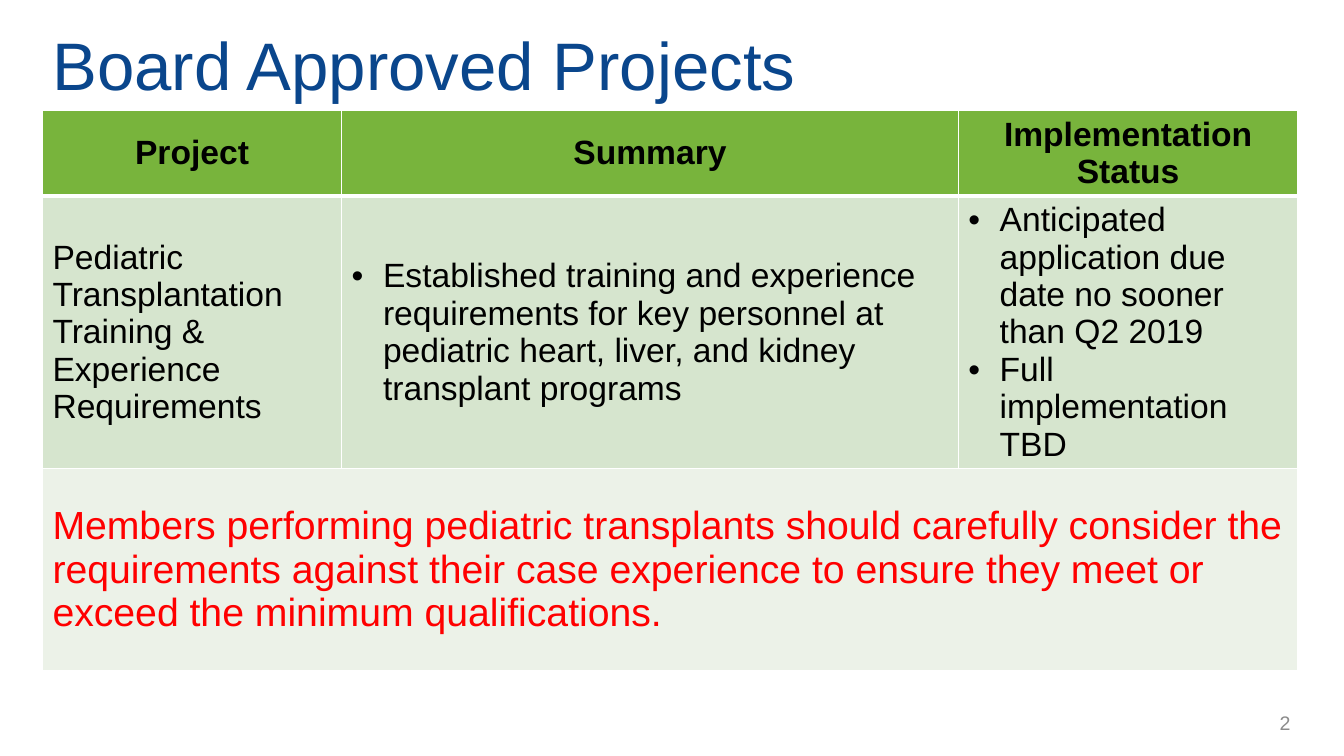
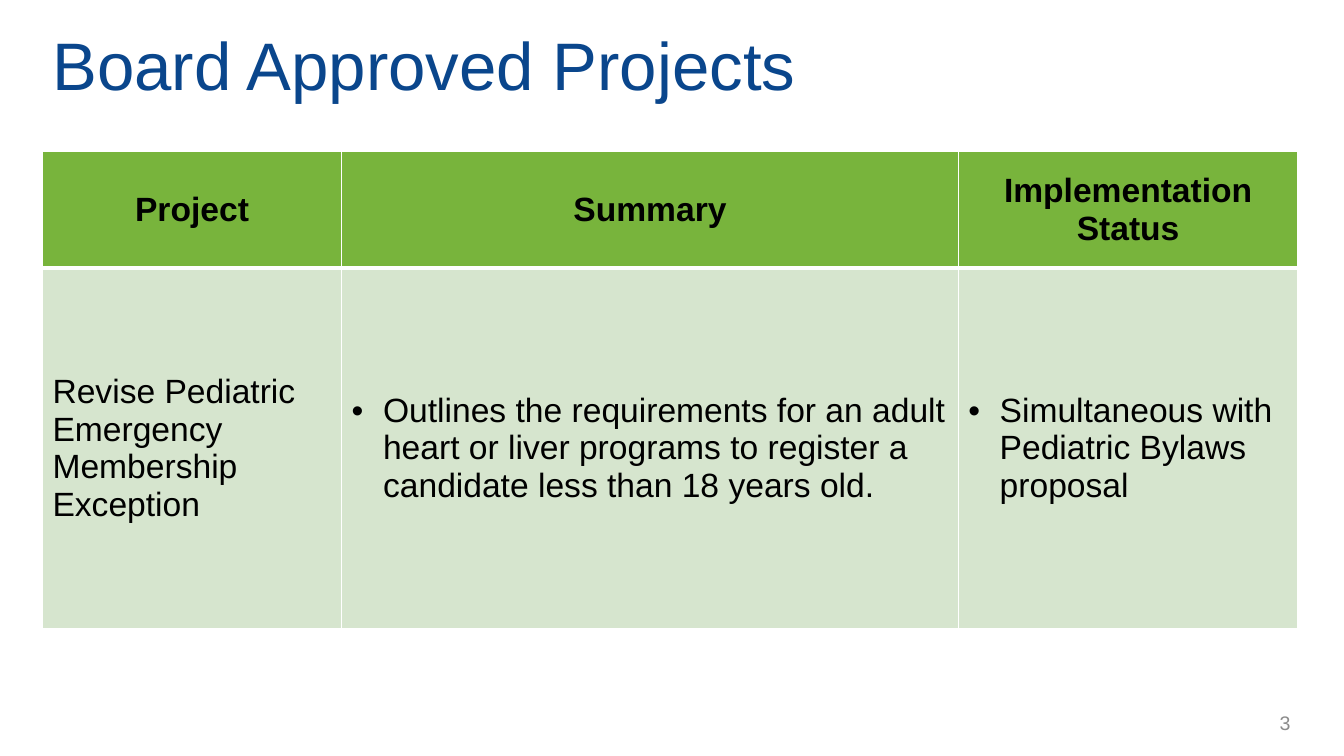
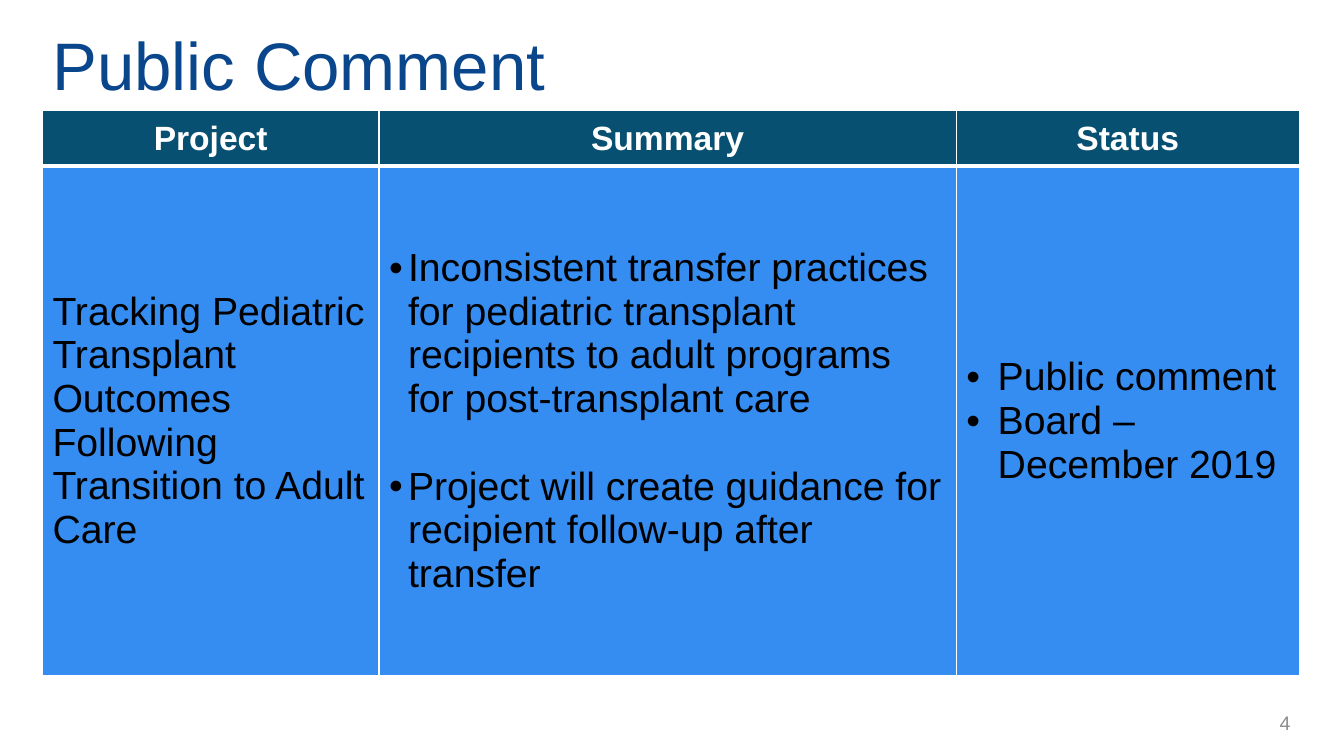
from dataclasses import dataclass

from lxml.etree import SubElement
from pptx import Presentation
from pptx.dml.color import RGBColor
from pptx.enum.text import MSO_ANCHOR, PP_ALIGN
from pptx.oxml.ns import qn
from pptx.presentation import Presentation as Deck
from pptx.slide import Slide
from pptx.table import _Cell
from pptx.text.text import TextFrame, _Paragraph
from pptx.util import Cm, Pt


@dataclass(frozen=True)
class Theme:
    font: str = "Arial"
    navy: str = "0A468C"
    green: str = "78B43C"
    sage: str = "D6E5CE"
    mist: str = "ECF2E8"
    teal: str = "085072"
    blue: str = "358CF1"
    red: str = "FF0000"
    gray: str = "8C8C8C"
    black: str = "000000"
    white: str = "FFFFFF"
    title_size: float = 48
    large_size: float = 28
    body_size: float = 24
    number_size: float = 14
    rule: float = 1
    header_rule: float = 3


THEME = Theme()


@dataclass(frozen=True)
class Entry:
    lines: tuple[str, ...]
    fill: str
    size: float = THEME.body_size
    color: str = THEME.black
    bold: bool = False
    align: PP_ALIGN = PP_ALIGN.LEFT
    indent: float = 0
    gap: float = 0


@dataclass(frozen=True)
class ProjectSlide:
    title: str
    number: int
    top: float
    columns: tuple[float, ...]
    heights: tuple[float, ...]
    rows: tuple[tuple[Entry, ...], ...]


LEFT = 1.07
BULLET_INDENT = 0.79
TIGHT_INDENT = 0.48
BOARD_COLUMNS = (7.54, 15.54, 8.56)
COMMENT_COLUMNS = (8.48, 14.55, 8.64)


def header(labels: tuple[str, ...], fill: str, color: str) -> tuple[Entry, ...]:
    return tuple(
        Entry((label,), fill, color=color, bold=True, align=PP_ALIGN.CENTER)
        for label in labels
    )


BOARD_HEADER = header(
    ("Project", "Summary", "Implementation Status"), THEME.green, THEME.black
)

PROJECT_SLIDES = (
    ProjectSlide(
        "Board Approved Projects", 2, 2.79, BOARD_COLUMNS, (2.13, 6.88, 5.08),
        (
            BOARD_HEADER,
            (
                Entry(("Pediatric Transplantation Training & Experience Requirements",),
                      THEME.sage),
                Entry(("Established training and experience requirements for key "
                       "personnel at pediatric heart, liver, and kidney transplant "
                       "programs",), THEME.sage, indent=BULLET_INDENT),
                Entry(("Anticipated application due date no sooner than Q2 2019",
                       "Full implementation TBD"), THEME.sage, indent=BULLET_INDENT),
            ),
            (
                Entry(("Members performing pediatric transplants should carefully "
                       "consider the requirements against their case experience to "
                       "ensure they meet or exceed the minimum qualifications.",),
                      THEME.mist, THEME.large_size, THEME.red),
            ),
        ),
    ),
    ProjectSlide(
        "Board Approved Projects", 3, 3.81, BOARD_COLUMNS, (2.95, 9.07),
        (
            BOARD_HEADER,
            (
                Entry(("Revise Pediatric Emergency Membership Exception",), THEME.sage),
                Entry(("Outlines the requirements for an adult heart or liver programs "
                       "to register a candidate less than 18 years old.",),
                      THEME.sage, indent=BULLET_INDENT),
                Entry(("Simultaneous with Pediatric Bylaws proposal",),
                      THEME.sage, indent=BULLET_INDENT),
            ),
        ),
    ),
    ProjectSlide(
        "Public Comment", 4, 2.79, COMMENT_COLUMNS, (1.4, 12.83),
        (
            header(("Project", "Summary", "Status"), THEME.teal, THEME.white),
            (
                Entry(("Tracking Pediatric Transplant Outcomes Following Transition "
                       "to Adult Care",), THEME.blue, THEME.large_size),
                Entry(("Inconsistent transfer practices for pediatric transplant "
                       "recipients to adult programs for post-transplant care",
                       "Project will create guidance for recipient follow-up after "
                       "transfer"), THEME.blue, THEME.large_size,
                      indent=TIGHT_INDENT, gap=31.3),
                Entry(("Public comment", "Board – December 2019"),
                      THEME.blue, THEME.large_size, indent=BULLET_INDENT),
            ),
        ),
    ),
)


def add_run(paragraph: _Paragraph, text: str, size: float, color: str,
            bold: bool = False) -> None:
    run = paragraph.add_run()
    run.text = text
    run.font.name = THEME.font
    run.font.size = Pt(size)
    run.font.bold = bold
    run.font.color.rgb = RGBColor.from_string(color)


def add_bullet(paragraph: _Paragraph, indent: float) -> None:
    properties = paragraph._p.get_or_add_pPr()
    properties.set("marL", str(Cm(indent)))
    properties.set("indent", str(-Cm(indent)))
    SubElement(properties, qn("a:buFont"), typeface=THEME.font)
    SubElement(properties, qn("a:buChar"), char="•")


def add_borders(cell: _Cell, top: float, bottom: float) -> None:
    properties = cell._tc.get_or_add_tcPr()
    widths = {"L": THEME.rule, "R": THEME.rule, "T": top, "B": bottom}
    for side, width in widths.items():
        border = SubElement(properties, qn(f"a:ln{side}"), w=str(Pt(width)))
        solid = SubElement(border, qn("a:solidFill"))
        SubElement(solid, qn("a:srgbClr"), val=THEME.white)


def fill_frame(frame: TextFrame, entry: Entry) -> None:
    for index, line in enumerate(entry.lines):
        paragraph = frame.add_paragraph() if index else frame.paragraphs[0]
        paragraph.alignment = entry.align
        if entry.indent:
            add_bullet(paragraph, entry.indent)
        if index and entry.gap:
            paragraph.space_before = Pt(entry.gap)
        add_run(paragraph, line, entry.size, entry.color, entry.bold)


def add_project_table(slide: Slide, content: ProjectSlide) -> None:
    columns, heights = content.columns, content.heights
    table = slide.shapes.add_table(
        len(heights), len(columns), Cm(LEFT), Cm(content.top),
        Cm(sum(columns)), Cm(sum(heights)),
    ).table
    table.horz_banding = False
    for column, width in zip(table.columns, columns):
        column.width = Cm(width)
    for row_index, (height, entries) in enumerate(zip(heights, content.rows)):
        table.rows[row_index].height = Cm(height)
        top = THEME.header_rule if row_index == 1 else THEME.rule
        bottom = THEME.header_rule if row_index == 0 else THEME.rule
        for column_index in range(len(columns)):
            cell = table.cell(row_index, column_index)
            add_borders(cell, top, bottom)
            cell.fill.solid()
            entry = entries[min(column_index, len(entries) - 1)]
            cell.fill.fore_color.rgb = RGBColor.from_string(entry.fill)
            cell.vertical_anchor = MSO_ANCHOR.MIDDLE
        if len(entries) == 1:
            table.cell(row_index, 0).merge(table.cell(row_index, len(columns) - 1))
        for column_index, entry in enumerate(entries):
            fill_frame(table.cell(row_index, column_index).text_frame, entry)


def add_title(slide: Slide, text: str) -> None:
    title = slide.shapes.title
    title.left, title.top = Cm(LEFT), Cm(0.43)
    title.width, title.height = Cm(32.39), Cm(2.36)
    title.text_frame.vertical_anchor = MSO_ANCHOR.MIDDLE
    heading = title.text_frame.paragraphs[0]
    heading.alignment = PP_ALIGN.LEFT
    add_run(heading, text, THEME.title_size, THEME.navy)


def add_page_number(slide: Slide, number: int) -> None:
    footer = slide.shapes.add_textbox(Cm(27.03), Cm(17.7), Cm(5.74), Cm(1.02))
    frame = footer.text_frame
    frame.word_wrap = True
    frame.vertical_anchor = MSO_ANCHOR.MIDDLE
    frame.paragraphs[0].alignment = PP_ALIGN.RIGHT
    add_run(frame.paragraphs[0], str(number), THEME.number_size, THEME.gray)


def add_project_slide(deck: Deck, content: ProjectSlide) -> None:
    slide = deck.slides.add_slide(deck.slide_layouts.get_by_name("Title Only"))
    add_project_table(slide, content)
    add_title(slide, content.title)
    add_page_number(slide, content.number)


def main() -> None:
    deck = Presentation()
    deck.slide_width, deck.slide_height = Cm(33.87), Cm(19.05)
    for content in PROJECT_SLIDES:
        add_project_slide(deck, content)
    deck.save("out.pptx")


if __name__ == "__main__":
    main()
